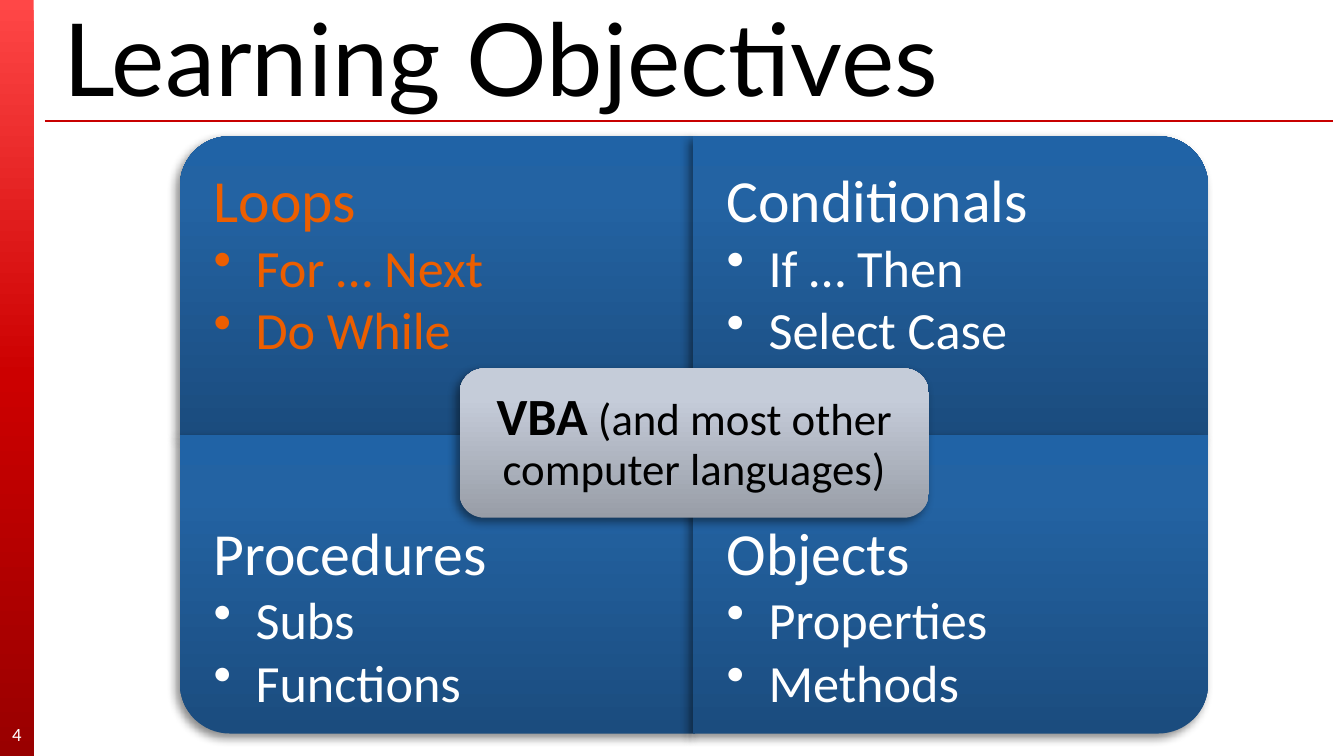
"""Build the Learning Objectives slide with a four-part VBA matrix."""
import math
from dataclasses import dataclass
from typing import Any

from lxml import etree
from pptx import Presentation
from pptx.dml.color import RGBColor
from pptx.enum import shapes, text
from pptx.oxml.ns import qn
from pptx.util import Pt

Stops = tuple[tuple[int, str], ...]


@dataclass(frozen=True)
class Theme:
    """Hold the colours, fonts and type sizes of the slide."""
    black: str = "000000"
    white: str = "FFFFFF"
    accent: str = "EC5E00"
    rule: str = "C80000"
    bar: Stops = ((0, "FF4747"), (50, "CC0000"), (100, "990000"))
    quadrant: Stops = ((0, "1B4C7E"), (80, "2363A3"), (100, "2063A6"))
    hub: Stops = ((0, "989DA7"), (80, "C5CCD9"), (100, "C6CCDB"))
    title_font: str = "Lato"
    body_font: str = "Calibri"
    title: int = 54
    heading: int = 32
    item: int = 28
    hub_note: int = 24
    number: int = 10


@dataclass(frozen=True)
class Box:
    """Hold a rectangle in points."""
    left: float
    top: float
    width: float
    height: float

    def lengths(self) -> tuple[Pt, ...]:
        """Return the rectangle as slide lengths."""
        return tuple(Pt(v) for v in (self.left, self.top, self.width, self.height))


@dataclass(frozen=True)
class Quadrant:
    """Describe one quarter of the matrix."""
    row: int
    col: int
    corner: int
    heading: str
    items: tuple[str, ...]
    color: str


THEME = Theme()
MATRIX = Box(96.4, 73, 274.8, 160)
OVERLAP = 1.2
RADIUS = 26.6
ARC_STEPS = 16
INSETS = {0: (18, 14.4, 18, 57.6), 1: (18, 43.2, 18, 18)}
QUADRANTS = (
    Quadrant(0, 0, 0, "Loops", ("For … Next", "Do While"), THEME.accent),
    Quadrant(0, 1, 1, "Conditionals", ("If … Then", "Select Case"), THEME.white),
    Quadrant(1, 0, 3, "Procedures", ("Subs", "Functions"), THEME.white),
    Quadrant(1, 1, 2, "Objects", ("Properties", "Methods"), THEME.white),
)


def set_all(target: Any, values: dict[str, Any]) -> None:
    """Set each named attribute on the target."""
    for name, value in values.items():
        setattr(target, name, value)


def add_run(p: Any, words: str, size: int, color: str,
            font: str = THEME.body_font, bold: bool = False) -> None:
    """Add a formatted run to a paragraph."""
    r = p.add_run()
    r.text = words
    set_all(r.font, {"name": font, "size": Pt(size), "bold": bold})
    r.font.color.rgb = RGBColor.from_string(color)


def set_frame(sp: Any, insets: tuple[float, ...], anchor: Any) -> Any:
    """Format the text frame of a shape and return it."""
    tf = sp.text_frame
    sides = ("margin_left", "margin_top", "margin_right", "margin_bottom")
    set_all(tf, dict(zip(sides, map(Pt, insets))))
    set_all(tf, {"word_wrap": True, "vertical_anchor": anchor,
                 "auto_size": text.MSO_AUTO_SIZE.NONE})
    return tf


def paint(sp: Any, stops: Stops, angle: int, shadow: bool = True) -> None:
    """Give a shape a gradient, no outline and an optional shadow."""
    sp.fill.gradient()
    sp.fill.gradient_angle = angle
    sp.line.fill.background()
    sp.shadow.inherit = False
    spPr = sp._element.spPr
    gradient = spPr.find(".//" + qn("a:gsLst"))
    for old in list(gradient):
        gradient.remove(old)
    for position, color in stops:
        stop = etree.SubElement(gradient, qn("a:gs"), pos=str(position * 1000))
        etree.SubElement(stop, qn("a:srgbClr"), val=color)
    if shadow:
        outer = etree.SubElement(
            spPr.find(qn("a:effectLst")), qn("a:outerShdw"), blurRad=str(Pt(5)),
            dist=str(Pt(3)), dir=str(135 * 60000), algn="br", rotWithShape="0")
        color = etree.SubElement(outer, qn("a:srgbClr"), val=THEME.black)
        etree.SubElement(color, qn("a:alpha"), val="45000")


def outline(box: Box, rounded: int) -> list[tuple[int, int]]:
    """Return the clockwise outline of a rectangle with one rounded corner."""
    points = []
    for i, (x, y) in enumerate(((0, 0), (1, 0), (1, 1), (0, 1))):
        left, top = box.left + x * box.width, box.top + y * box.height
        if i != rounded:
            points.append((Pt(left), Pt(top)))
            continue
        cx, cy = left + RADIUS * (1 - 2 * x), top + RADIUS * (1 - 2 * y)
        for step in range(ARC_STEPS + 1):
            a = math.radians(180 + 90 * (i + step / ARC_STEPS))
            points.append((Pt(cx + RADIUS * math.cos(a)), Pt(cy + RADIUS * math.sin(a))))
    return points


def add_quadrant(s: Any, q: Quadrant) -> None:
    """Draw one quarter of the matrix with its heading and bullets."""
    box = Box(MATRIX.left + q.col * MATRIX.width, MATRIX.top + q.row * MATRIX.height,
              MATRIX.width + OVERLAP, MATRIX.height)
    first, *rest = outline(box, q.corner)
    builder = s.shapes.build_freeform(*first)
    builder.add_line_segments(rest, close=True)
    sp = builder.convert_to_shape()
    paint(sp, THEME.quadrant, 90)
    tf = set_frame(sp, INSETS[q.row], text.MSO_ANCHOR.TOP)
    p = tf.paragraphs[0]
    p.alignment = text.PP_ALIGN.LEFT
    add_run(p, q.heading, THEME.heading, q.color)
    for item in q.items:
        p = tf.add_paragraph()
        set_all(p, {"level": 1, "alignment": text.PP_ALIGN.LEFT})
        pPr = p._p.get_or_add_pPr()
        pPr.set("marL", str(Pt(22.5)))
        pPr.set("indent", str(-Pt(22.5)))
        etree.SubElement(pPr, qn("a:buChar"), char="•")
        add_run(p, item, THEME.item, q.color)


def add_hub(s: Any) -> None:
    """Draw the central label over the matrix."""
    box = Box(246.2, 197.4, 251.4, 80)
    sp = s.shapes.add_shape(shapes.MSO_SHAPE.ROUNDED_RECTANGLE, *box.lengths())
    paint(sp, THEME.hub, 90)
    tf = set_frame(sp, (12.2,) * 4, text.MSO_ANCHOR.MIDDLE)
    p = tf.paragraphs[0]
    set_all(p, {"alignment": text.PP_ALIGN.CENTER, "line_spacing": 0.9})
    add_run(p, "VBA", THEME.item, THEME.black, bold=True)
    add_run(p, " (and most other computer languages)", THEME.hub_note, THEME.black)


def add_frame(s: Any) -> None:
    """Draw the side bar, the title rule and the slide number."""
    bar = s.shapes.add_shape(shapes.MSO_SHAPE.RECTANGLE, *Box(0, 0, 18, 405).lengths())
    paint(bar, THEME.bar, 270, shadow=False)
    rule = s.shapes.add_connector(shapes.MSO_CONNECTOR.STRAIGHT,
                                  Pt(24), Pt(64.8), Pt(714), Pt(64.8))
    rule.line.color.rgb = RGBColor.from_string(THEME.rule)
    rule.line.width = Pt(0.75)
    etree.SubElement(rule._element.spPr, qn("a:effectLst"))
    number = s.shapes.add_textbox(*Box(0, 382.5, 18, 21.6).lengths())
    p = set_frame(number, (0,) * 4, text.MSO_ANCHOR.MIDDLE).paragraphs[0]
    p.alignment = text.PP_ALIGN.CENTER
    add_run(p, "4", THEME.number, THEME.white)


def add_title(s: Any, words: str) -> None:
    """Place and format the slide title."""
    sp = s.shapes.title
    box = Box(27, 10.8, 690, 38.2)
    set_all(sp, dict(zip(("left", "top", "width", "height"), box.lengths())))
    p = set_frame(sp, (7.2, 3.6, 7.2, 3.6), text.MSO_ANCHOR.MIDDLE).paragraphs[0]
    p.alignment = text.PP_ALIGN.LEFT
    add_run(p, words, THEME.title, THEME.black, THEME.title_font)


def main() -> None:
    """Build and save the presentation."""
    prs = Presentation()
    set_all(prs, {"slide_width": Pt(720), "slide_height": Pt(405)})
    s = prs.slides.add_slide(prs.slide_layouts[5])
    add_frame(s)
    add_title(s, "Learning Objectives")
    for q in QUADRANTS:
        add_quadrant(s, q)
    add_hub(s)
    prs.save("out.pptx")


if __name__ == "__main__":
    main()
